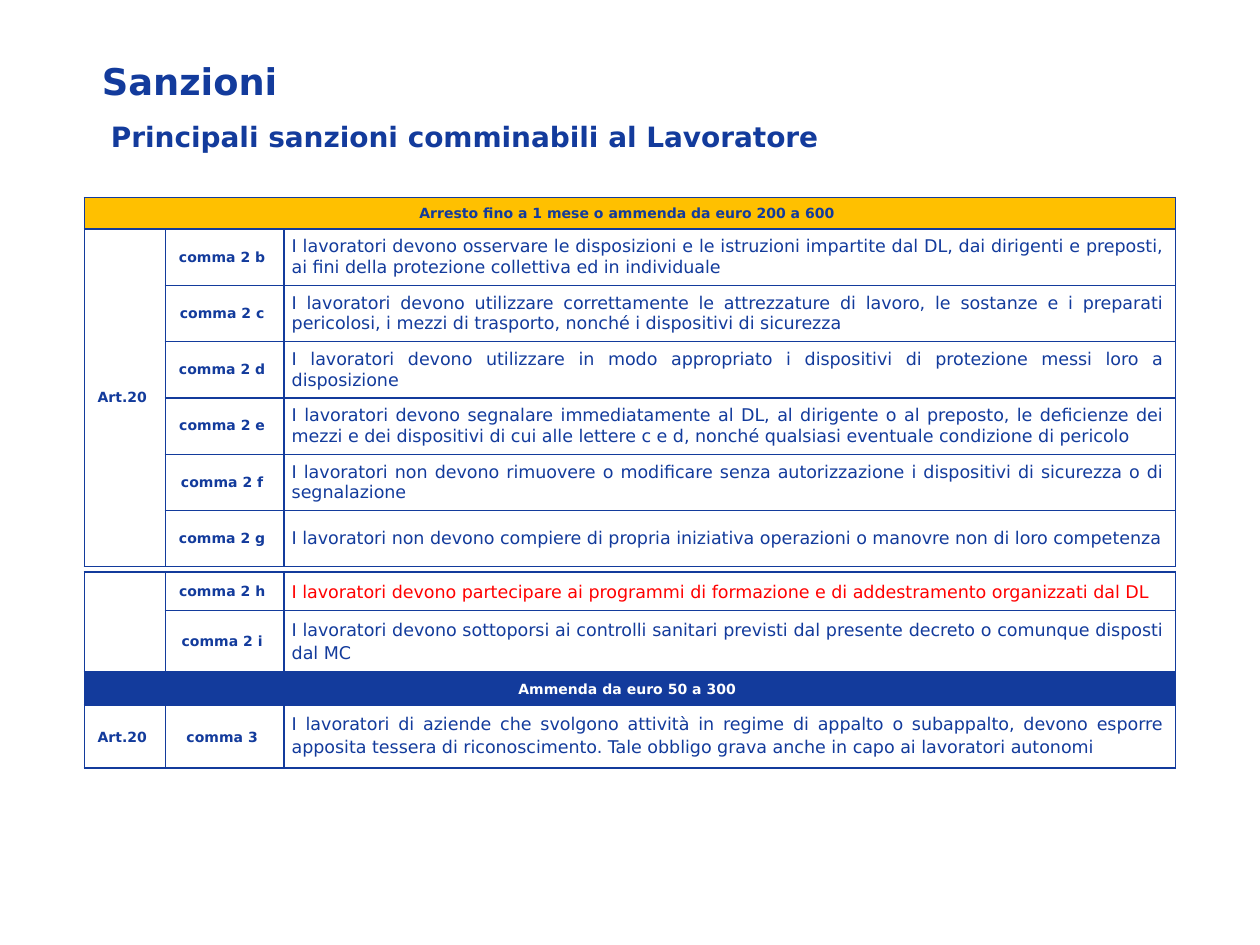
from itertools import groupby

from lxml import etree
from pptx import Presentation, util as u
from pptx.dml.color import RGBColor
from pptx.enum import text
from pptx.oxml import ns

PENALTY_ROWS = [
    ("Arresto fino a 1 mese o ammenda da euro 200 a 600",),
    ("Art.20", "comma 2 b", "I lavoratori devono osservare le disposizioni e le istruzioni impartite dal DL, "
     "dai dirigenti e preposti, ai fini della protezione collettiva ed in individuale"),
    ("Art.20", "comma 2 c", "I lavoratori devono utilizzare correttamente le attrezzature di lavoro, le sostanze "
     "e i preparati pericolosi, i mezzi di trasporto, nonché i dispositivi di sicurezza"),
    ("Art.20", "comma 2 d", "I lavoratori devono utilizzare in modo appropriato i dispositivi di protezione "
     "messi loro a disposizione"),
    ("Art.20", "comma 2 e", "I lavoratori devono segnalare immediatamente al DL, al dirigente o al preposto, "
     "le deficienze dei mezzi e dei dispositivi di cui alle lettere c e d, nonché qualsiasi eventuale "
     "condizione di pericolo"),
    ("Art.20", "comma 2 f", "I lavoratori non devono rimuovere o modificare senza autorizzazione i dispositivi "
     "di sicurezza o di segnalazione"),
    ("Art.20", "comma 2 g", "I lavoratori non devono compiere di propria iniziativa operazioni o manovre "
     "non di loro competenza"),
]
FURTHER_ROWS = [
    ("", "comma 2 h", "I lavoratori devono partecipare ai programmi di formazione e di addestramento "
     "organizzati dal DL"),
    ("", "comma 2 i", "I lavoratori devono sottoporsi ai controlli sanitari previsti dal presente decreto "
     "o comunque disposti dal MC"),
    ("Ammenda da euro 50 a 300",),
    ("Art.20", "comma 3", "I lavoratori di aziende che svolgono attività in regime di appalto o subappalto, "
     "devono esporre apposita tessera di riconoscimento. Tale obbligo grava anche in capo ai lavoratori autonomi"),
]


def color(value):
    return RGBColor.from_string(value)


class SanctionsSlide:
    """Holds the style and the slide, and draws headings and sanction tables."""

    font, blue, amber, red, white = "DejaVu Sans", "133B9C", "FFC000", "FF0000", "FFFFFF"
    columns = (46.3, 67.9, 509.3)

    def __init__(self, deck):
        self.slide = deck.slides.add_slide(deck.slide_layouts[6])

    def wording(self, paragraph, words, size, ink, bold=True):
        paragraph.text = words
        paragraph.font.name = self.font
        paragraph.font.size = u.Pt(size)
        paragraph.font.bold = bold
        paragraph.font.color.rgb = color(ink)

    def heading(self, words, size, left, top, width, height, inset, anchor):
        frame = self.slide.shapes.add_textbox(u.Pt(left), u.Pt(top), u.Pt(width), u.Pt(height)).text_frame
        frame.word_wrap = True
        frame.vertical_anchor = anchor
        frame.margin_left = frame.margin_right = u.Pt(inset[0])
        frame.margin_top = frame.margin_bottom = u.Pt(inset[1])
        self.wording(frame.paragraphs[0], words, size, self.blue)

    def border(self, cell):
        properties = cell._tc.get_or_add_tcPr()
        for position, side in enumerate(("lnL", "lnR", "lnT", "lnB")):
            line = etree.Element(ns.qn(f"a:{side}"), w=str(u.Pt(1)))
            fill = etree.SubElement(line, ns.qn("a:solidFill"))
            etree.SubElement(fill, ns.qn("a:srgbClr"), val=self.blue)
            properties.insert(position, line)

    def cell(self, cell, words, ink, fill=None, body=False, top=False, spacing=1.0):
        cell.margin_left = cell.margin_top = cell.margin_bottom = u.Pt(4.32)
        cell.margin_right = u.Pt(7.2)
        cell.vertical_anchor = text.MSO_ANCHOR.TOP if top else text.MSO_ANCHOR.MIDDLE
        if fill:
            cell.fill.solid()
            cell.fill.fore_color.rgb = color(fill)
        else:
            cell.fill.background()
        self.border(cell)
        paragraph = cell.text_frame.paragraphs[0]
        paragraph.alignment = text.PP_ALIGN.JUSTIFY if body else text.PP_ALIGN.CENTER
        paragraph.line_spacing = spacing
        self.wording(paragraph, words, 10 if body else 8, ink, not body)

    def table(self, rows, top, heights, band, band_ink, spacing=1.0, highlighted=None):
        frame = self.slide.shapes.add_table(len(rows), len(self.columns), u.Pt(48.2), u.Pt(top),
                                            u.Pt(sum(self.columns)), u.Pt(sum(heights)))
        table = frame.table
        table.first_row = table.horz_banding = False
        for column, width in zip(table.columns, self.columns):
            column.width = u.Pt(width)
        for row, height in zip(table.rows, heights):
            row.height = u.Pt(height)

        start = 0
        for article, group in groupby(rows, key=lambda row: row[0]):
            entries = list(group)
            end = start + len(entries) - 1
            is_band = len(entries[0]) == 1
            for index, entry in enumerate(entries, start):
                after_band = index > 0 and len(rows[index - 1]) == 1
                labels = (article if index == start else "", *(entry[1:] or ("", "")))
                for column, words in enumerate(labels):
                    body = column == 2 and not is_band
                    ink = band_ink if is_band else self.red if body and entry[1] == highlighted else self.blue
                    self.cell(table.cell(index, column), words, ink, band if is_band else None,
                              body, body and after_band, spacing)
            if is_band:
                table.cell(start, 0).merge(table.cell(start, 2))
            elif end > start:
                table.cell(start, 0).merge(table.cell(end, 0))
            start = end + 1


def main():
    deck = Presentation()
    deck.slide_width, deck.slide_height = u.Pt(720), u.Pt(540)
    page = SanctionsSlide(deck)
    page.table(PENALTY_ROWS, 113, [18] + [32.15] * 6, page.amber, page.blue)
    page.heading("Sanzioni", 21, 54, -13.7, 612, 77, (4.3, 4.3), text.MSO_ANCHOR.BOTTOM)
    page.heading("Principali sanzioni comminabili al Lavoratore", 16, 56.9, 65.5, 569.5, 26.6,
                 (6.5, 2.9), text.MSO_ANCHOR.TOP)
    page.table(FURTHER_ROWS, 326.9, [21.6, 34.6, 18.9, 36], page.blue, page.white,
               spacing=1.1, highlighted="comma 2 h")
    deck.save("out.pptx")


if __name__ == "__main__":
    main()
